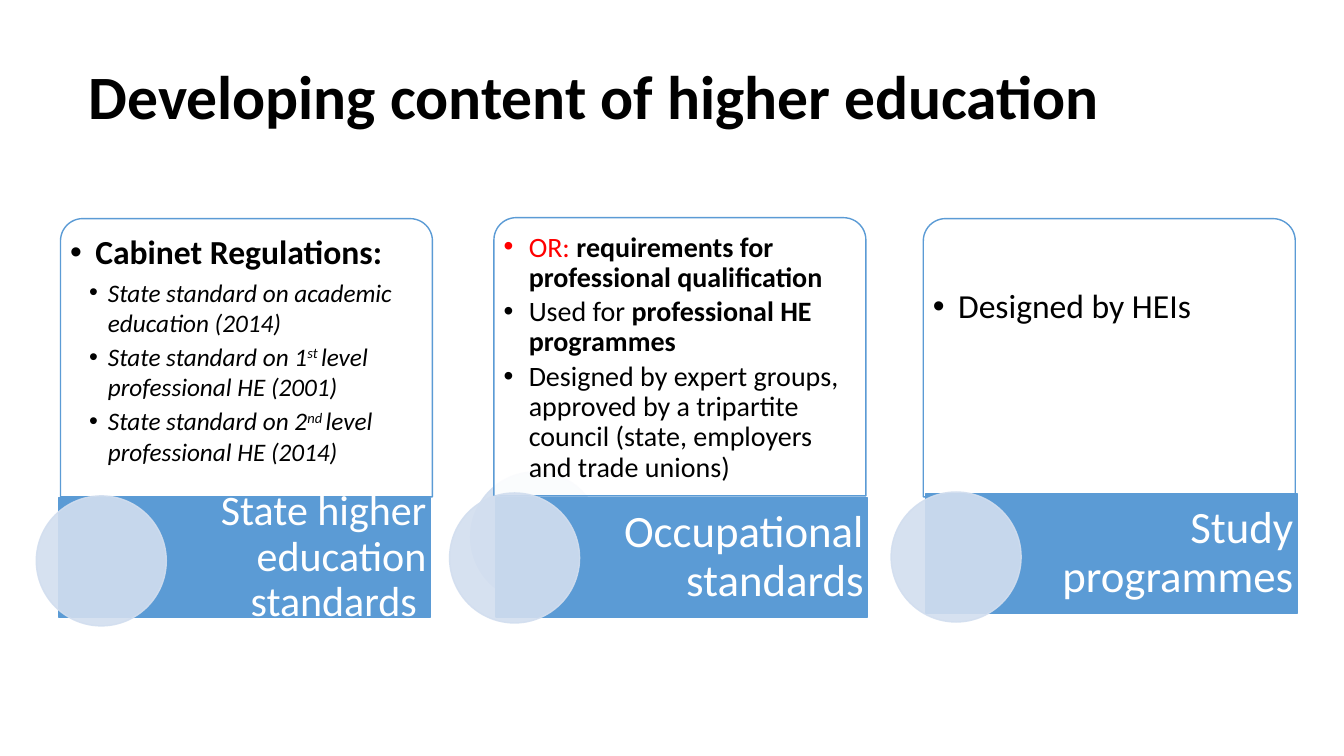
from pptx import Presentation
from pptx.dml.color import RGBColor
from pptx.enum.shapes import MSO_SHAPE as Shape
from pptx.enum.text import MSO_ANCHOR as Anchor, PP_ALIGN as Align
from pptx.oxml.ns import qn
from pptx.util import Pt
from lxml.etree import SubElement

COLORS = {"black": "000000", "white": "FFFFFF", "red": "FF0000",
          "blue": "5B9BD5", "pale": "D2DEEF"}
FONT = "Calibri"
CARD_SIZE = (265.7, 198.7)
BAR_SIZE = (265.7, 85)
LABEL_SHIFT, LABEL_WIDTH = 78.7, 187
CIRCLE = 92.9

# Paragraphs: (size, line spacing, left indent, hanging indent, runs)
# Runs: (text, style words)
MAIN, SUB = (18, 18), (27, 13.5)
REGULATIONS = [
    (24, 0.9, *MAIN, [("Cabinet Regulations:", "bold")]),
    (18, 1, *SUB, [("State standard on academic education (2014)", "italic")]),
    (18, 1, *SUB, [("State standard on 1", "italic"), ("st ", "italic super"),
                   ("level professional HE (2001)", "italic")]),
    (18, 1, *SUB, [("State standard on 2", "italic"), ("nd ", "italic super"),
                   ("level professional HE (2014)", "italic")]),
]
REQUIREMENTS = [
    (20, 0.9, *MAIN, [("OR: ", "red"),
                      ("requirements for professional qualification", "bold")]),
    (20, 0.9, *MAIN, [("Used for ", ""), ("professional HE programmes", "bold")]),
    (20, 0.9, *MAIN, [("Designed by expert groups, approved by a tripartite "
                       "council (state, employers and trade unions)", "")]),
]
DESIGNERS = [(24, 0.9, *MAIN, [("Designed by HEIs", "")])]


def set_alpha(color_format, percent):
    color = color_format._xFill.find(qn("a:srgbClr"))
    SubElement(color, qn("a:alpha"), val=str(percent * 1000))


def add_box(slide, kind, left, top, size, fill, line, alpha=100):
    shape = slide.shapes.add_shape(kind, Pt(left), Pt(top), Pt(size[0]), Pt(size[1]))
    shape.shadow.inherit = False
    shape.fill.solid()
    shape.fill.fore_color.rgb = RGBColor.from_string(COLORS[fill])
    shape.line.color.rgb = RGBColor.from_string(COLORS[line])
    shape.line.width = Pt(1)
    if alpha < 100:
        color = shape._element.spPr.find(qn("a:solidFill")).find(qn("a:srgbClr"))
        SubElement(color, qn("a:alpha"), val=str(alpha * 1000))
    return shape


def add_frame(slide, left, top, width, height, margins, anchor=Anchor.TOP):
    box = slide.shapes.add_textbox(Pt(left), Pt(top), Pt(width), Pt(height))
    frame = box.text_frame
    frame.word_wrap = True
    frame.vertical_anchor = anchor
    (frame.margin_left, frame.margin_top,
     frame.margin_right, frame.margin_bottom) = [Pt(value) for value in margins]
    return frame


def format_run(run, size, color="black", style=""):
    run.font.name = FONT
    run.font.size = Pt(size)
    run.font.color.rgb = RGBColor.from_string(COLORS[color])
    run.font.bold = "bold" in style
    run.font.italic = "italic" in style
    if "super" in style:
        run.font._element.set("baseline", "30000")


def add_line(slide, text, size, color, place, margins, style="", align=Align.LEFT):
    frame = add_frame(slide, *place, margins, Anchor.MIDDLE)
    frame.text = text
    paragraph = frame.paragraphs[0]
    paragraph.alignment = align
    paragraph.line_spacing = 0.9
    format_run(paragraph.runs[0], size, color, style)


def add_bullets(frame, items):
    for index, (size, spacing, indent, hanging, runs) in enumerate(items):
        paragraph = frame.add_paragraph() if index else frame.paragraphs[0]
        paragraph.line_spacing = spacing
        paragraph.space_after = Pt(0.15 * size)
        for text, style in runs:
            run = paragraph.add_run()
            run.text = text
            format_run(run, size, "red" if style == "red" else "black", style)
        properties = paragraph._p.get_or_add_pPr()
        properties.set("marL", str(Pt(indent)))
        properties.set("indent", str(-Pt(hanging)))
        SubElement(properties, qn("a:buFont"), typeface="Arial")
        SubElement(properties, qn("a:buChar"), char="•")


def add_card(slide, left, top, items, top_margin):
    card = add_box(slide, Shape.ROUND_2_SAME_RECTANGLE, left, top, CARD_SIZE,
                   "white", "blue", 90)
    card.adjustments[0] = 0.08
    card.adjustments[1] = 0
    frame = add_frame(slide, left + 4.7, top + 5, 256.3, 193.7,
                      (2.2, top_margin, 2.2, 2.2))
    add_bullets(frame, items)


def add_bar(slide, left, top, label, size):
    add_box(slide, Shape.RECTANGLE, left, top, BAR_SIZE, "blue", "blue")
    add_line(slide, label, size, "white",
             (left + LABEL_SHIFT, top, LABEL_WIDTH, BAR_SIZE[1]),
             (9, 0, 2.9, 0), align=Align.RIGHT)


def add_circle(slide, left, top):
    circle = add_box(slide, Shape.OVAL, left, top, (CIRCLE, CIRCLE),
                     "pale", "pale", 90)
    line_color = circle.line._ln.find(qn("a:solidFill")).find(qn("a:srgbClr"))
    SubElement(line_color, qn("a:alpha"), val="90000")


def main():
    presentation = Presentation()
    presentation.slide_width, presentation.slide_height = Pt(960), Pt(540)
    slide = presentation.slides.add_slide(presentation.slide_layouts[6])

    # Title
    add_line(slide, "Developing content of higher education", 44, "black",
             (56.2, 39.6, 828, 63.4), (7.2, 3.6, 7.2, 3.6), "bold")

    # Study programmes
    add_card(slide, 659.5, 156.2, DESIGNERS, 67.2)
    add_bar(slide, 661, 352.8, "Study programmes", 32)
    add_circle(slide, 636.5, 351.4)

    # State standards
    add_card(slide, 43.2, 156.2, REGULATIONS, 7.2)
    add_bar(slide, 41.8, 355.7, "State higher education standards ", 30)

    # Occupational standards, with a circle showing faintly behind the card
    add_circle(slide, 336.2, 337)
    add_card(slide, 352.8, 155.5, REQUIREMENTS, 5.8)
    add_bar(slide, 354.2, 355.7, "Occupational standards", 32)

    # Circles over the first two bars
    add_circle(slide, 25.9, 354.2)
    add_circle(slide, 321.1, 352.1)

    presentation.save("out.pptx")


if __name__ == "__main__":
    main()
